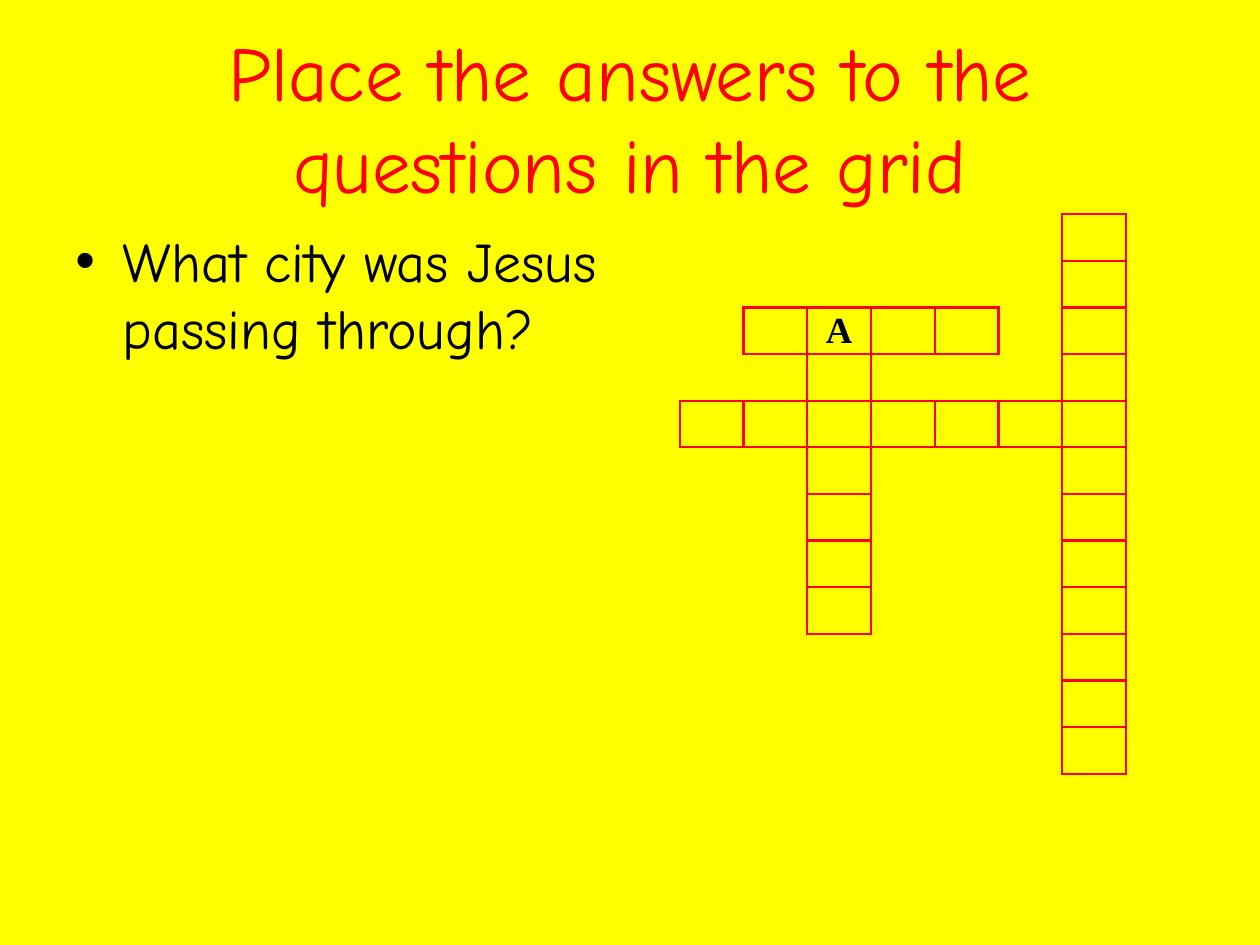
from dataclasses import dataclass

from lxml import etree
from pptx import Presentation
from pptx.dml.color import RGBColor
from pptx.enum.text import MSO_ANCHOR, MSO_AUTO_SIZE, PP_ALIGN
from pptx.oxml.ns import qn
from pptx.util import Pt

CENTER, LEFT = PP_ALIGN.CENTER, PP_ALIGN.LEFT
MIDDLE, TOP = MSO_ANCHOR.MIDDLE, MSO_ANCHOR.TOP
NO_FIT = MSO_AUTO_SIZE.NONE
TITLE_ONLY = 5

SIDES = {"L": (0, -1), "R": (0, 1), "T": (-1, 0), "B": (1, 0)}
ROWS, COLS = 12, 7
WORDS = [(2, 1, 4, "across"), (4, 0, 7, "across"), (2, 2, 7, "down"), (0, 6, 12, "down")]
LETTERS = {(2, 2): "A"}


@dataclass(frozen=True)
class Theme:
    background: str = "FFFF00"
    accent: str = "FF0000"
    ink: str = "000000"
    font: str = "Comic Neue"
    letter_font: str = "Times New Roman"
    title_size: float = 44
    body_size: float = 32
    letter_size: float = 21
    rule: float = 1.5


class SlideBuilder:
    """Adds styled elements to one slide, measured in points."""

    def __init__(self, prs, theme):
        self.theme = theme
        self.slide = prs.slides.add_slide(prs.slide_layouts[TITLE_ONLY])
        fill = self.slide.background.fill
        fill.solid()
        fill.fore_color.rgb = RGBColor.from_string(theme.background)

    def set_text(self, tf, text, size, color, font, align, bold=False):
        p = tf.paragraphs[0]
        p.text = text
        p.alignment = align
        for r in p.runs:
            r.font.size, r.font.name, r.font.bold = Pt(size), font, bold
            r.font.color.rgb = RGBColor.from_string(color)
        return p

    def frame(self, sp, anchor):
        tf = sp.text_frame
        tf.word_wrap = True
        tf.auto_size = NO_FIT
        tf.vertical_anchor = anchor
        return tf

    def title(self, text, left, top, width, height):
        sp = self.slide.shapes.title
        sp.left, sp.top, sp.width, sp.height = Pt(left), Pt(top), Pt(width), Pt(height)
        t = self.theme
        self.set_text(self.frame(sp, MIDDLE), text, t.title_size, t.accent, t.font, CENTER)

    def bullet(self, text, left, top, width, height, indent=27):
        sp = self.slide.shapes.add_textbox(Pt(left), Pt(top), Pt(width), Pt(height))
        t = self.theme
        p = self.set_text(self.frame(sp, TOP), text, t.body_size, t.ink, t.font, LEFT)
        p.space_before = Pt(t.body_size * 0.2)
        pPr = p._p.get_or_add_pPr()
        pPr.set("marL", str(Pt(indent)))
        pPr.set("indent", str(-Pt(indent)))
        etree.SubElement(pPr, qn("a:buFont"), typeface="Arial")
        etree.SubElement(pPr, qn("a:buChar"), char="•")

    def border(self, cell, side, ruled):
        tcPr = cell._tc.get_or_add_tcPr()
        ln = etree.SubElement(tcPr, qn(f"a:ln{side}"), w=str(Pt(self.theme.rule)))
        if ruled:
            fill = etree.SubElement(ln, qn("a:solidFill"))
            etree.SubElement(fill, qn("a:srgbClr"), val=self.theme.accent)
        else:
            etree.SubElement(ln, qn("a:noFill"))

    def crossword(self, squares, letters, left, top, width, height):
        sp = self.slide.shapes.add_table(ROWS, COLS, Pt(left), Pt(top), Pt(width), Pt(height))
        table = sp.table
        table.first_row = table.horz_banding = False
        for col in table.columns:
            col.width = Pt(width / COLS)
        for row in table.rows:
            row.height = Pt(height / ROWS)
        t = self.theme
        for row in range(ROWS):
            for col in range(COLS):
                cell = table.cell(row, col)
                cell.margin_left = cell.margin_right = cell.margin_top = cell.margin_bottom = 0
                cell.vertical_anchor = MIDDLE
                for side, (down, right) in SIDES.items():
                    neighbours = {(row, col), (row + down, col + right)}
                    self.border(cell, side, bool(neighbours & squares))
                cell.fill.background()
                if (row, col) in letters:
                    self.set_text(cell.text_frame, letters[row, col], t.letter_size,
                                  t.ink, t.letter_font, CENTER, bold=True)


def word_squares(row, col, length, direction):
    if direction == "across":
        return {(row, col + i) for i in range(length)}
    return {(row + i, col) for i in range(length)}


def main():
    prs = Presentation()
    prs.slide_width, prs.slide_height = Pt(720), Pt(540)
    s = SlideBuilder(prs, Theme())
    s.title("Place the answers to the questions in the grid", 36, 21.6, 648, 90)
    s.bullet("What city was Jesus passing through?", 36, 126, 363.6, 356.4)
    squares = set().union(*(word_squares(*word) for word in WORDS))
    s.crossword(squares, LETTERS, 388.4, 122.4, 255, 320)
    prs.save("out.pptx")


if __name__ == "__main__":
    main()
